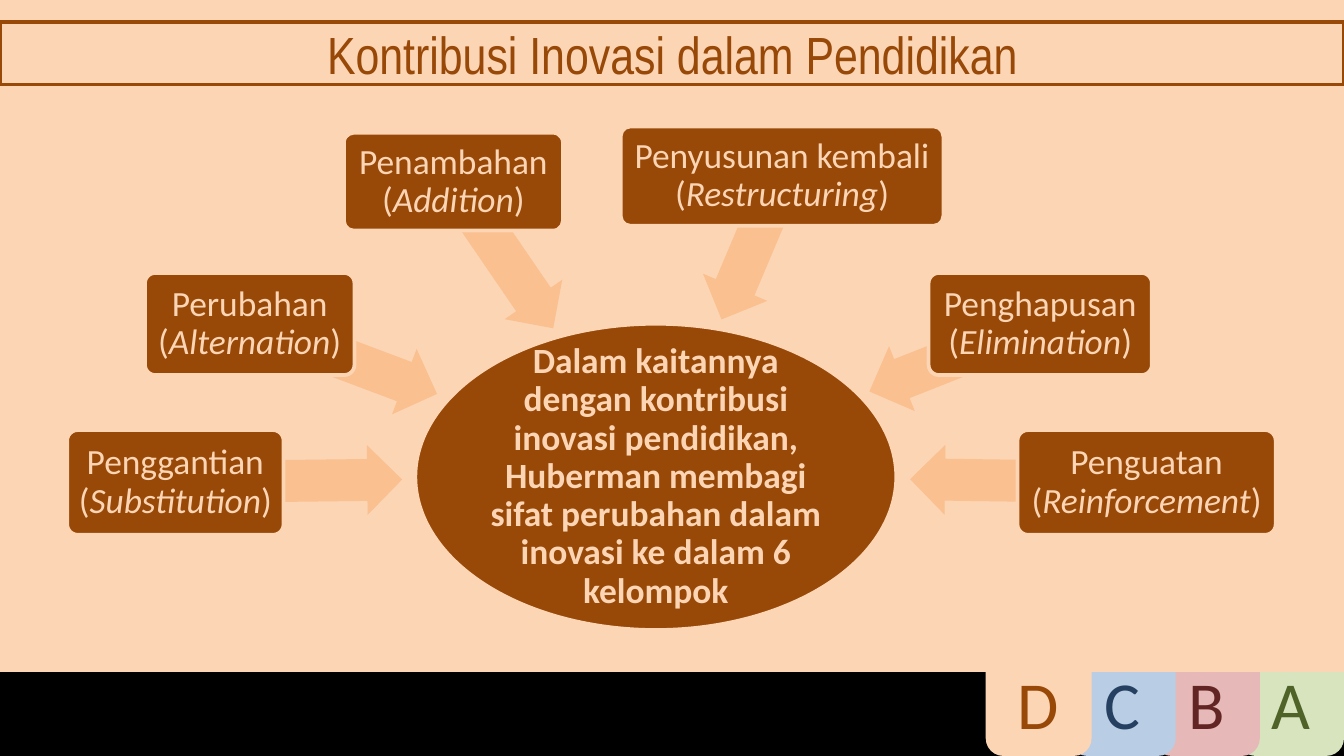
from pptx import Presentation
from pptx.dml.color import RGBColor
from pptx.enum.shapes import MSO_SHAPE
from pptx.enum.text import MSO_ANCHOR, MSO_AUTO_SIZE, PP_ALIGN
from pptx.util import Cm, Pt

BLACK = RGBColor(0x00, 0x00, 0x00)
BROWN = RGBColor(0x98, 0x48, 0x07)
PEACH = RGBColor(0xFC, 0xD5, 0xB5)
ORANGE = RGBColor(0xFA, 0xC0, 0x90)
GREEN = RGBColor(0xD7, 0xE4, 0xBD)
DARK_GREEN = RGBColor(0x4F, 0x62, 0x28)
PINK = RGBColor(0xE6, 0xB9, 0xB8)
DARK_RED = RGBColor(0x63, 0x25, 0x23)
BLUE = RGBColor(0xB9, 0xCD, 0xE5)
DARK_BLUE = RGBColor(0x25, 0x40, 0x61)

SLIDE_WIDTH, SLIDE_HEIGHT = 25.4, 14.29
PANEL_HEIGHT = 12.7
TAB_SIZE, TAB_STEP = 2, 1.59
ARROW_HEIGHT = 1.32

TITLE = "Kontribusi Inovasi dalam Pendidikan"
CENTRE_TEXT = (
    "Dalam kaitannya dengan kontribusi inovasi pendidikan, Huberman membagi "
    "sifat perubahan dalam inovasi ke dalam 6 kelompok"
)
BACK_TABS = [("A", GREEN, DARK_GREEN), ("B", PINK, DARK_RED), ("C", BLUE, DARK_BLUE)]
FRONT_TAB = ("D", PEACH, BROWN)
CONTRIBUTIONS = [
    ("Penggantian", "Substitution", (1.27, 8.13, 4.09, 1.98), (3.33, 8.43, 4.27), 179.3),
    ("Perubahan", "Alternation", (2.74, 5.16, 3.96, 1.93), (4.6, 6.12, 3.78), 200.6),
    ("Penambahan", "Addition", (6.5, 2.51, 4.14, 1.85), (7.85, 4.17, 3.33), 235.6),
    ("Penyusunan kembali", "Restructuring", (11.73, 2.39, 6.1, 1.88), (12.73, 4.01, 2.97), 292.9),
    ("Penghapusan", "Elimination", (17.55, 5.16, 4.22, 1.93), (16.31, 6.1, 3.48), 338.4),
    ("Penguatan", "Reinforcement", (19.23, 8.13, 4.88, 1.98), (17.2, 8.43, 4.47), 0.8),
]


def add_filled_shape(slide, kind, box, fill, outline=None):
    shape = slide.shapes.add_shape(kind, *map(Cm, box))
    shape.shadow.inherit = False
    shape.fill.solid()
    shape.fill.fore_color.rgb = fill
    set_outline(shape, outline)
    return shape


def set_outline(shape, color):
    if color is None:
        shape.line.fill.background()
    else:
        shape.line.color.rgb = color
        shape.line.width = Pt(2)


def write_text(shape, texts, size, color, font_name="Calibri", bold=False, margin=None, spacing=None):
    frame = shape.text_frame
    frame.word_wrap = True
    frame.auto_size = MSO_AUTO_SIZE.NONE
    frame.vertical_anchor = MSO_ANCHOR.MIDDLE
    if margin is not None:
        frame.margin_left = frame.margin_right = Cm(margin)
        frame.margin_top = frame.margin_bottom = Cm(margin)
    paragraph = frame.paragraphs[0]
    paragraph.alignment = PP_ALIGN.CENTER
    paragraph.line_spacing = spacing
    for position, text in enumerate(texts):
        run = paragraph.add_run()
        run.text = text
        run.font.name = font_name
        run.font.size = Pt(size)
        run.font.bold = bold
        run.font.italic = position == 1
        run.font.color.rgb = color


def add_tab(slide, position, letter, fill, color):
    left = SLIDE_WIDTH - TAB_SIZE - position * TAB_STEP
    box = (left, SLIDE_HEIGHT - TAB_SIZE, TAB_SIZE, TAB_SIZE)
    tab = add_filled_shape(slide, MSO_SHAPE.ROUNDED_RECTANGLE, box, fill)
    write_text(tab, [letter], 36, color)


def add_title(slide):
    title = slide.shapes.title
    title.left, title.top, title.width, title.height = map(Cm, (0, 0.41, SLIDE_WIDTH, 1.19))
    set_outline(title, BROWN)
    write_text(title, [TITLE], 28, BROWN, "Arial Narrow")
    title.element.getparent().append(title.element)


def add_contribution(slide, name, term, box, arrow_place, rotation):
    arrow = add_filled_shape(slide, MSO_SHAPE.LEFT_ARROW, (*arrow_place, ARROW_HEIGHT), ORANGE)
    arrow.adjustments[0] = 0.6
    arrow.adjustments[1] = 0.5
    arrow.rotation = rotation
    label = add_filled_shape(slide, MSO_SHAPE.ROUNDED_RECTANGLE, box, BROWN, PEACH)
    label.adjustments[0] = 0.1
    write_text(label, [f"{name} (", term, ")"], 19, PEACH, margin=0.1, spacing=0.9)


def main():
    presentation = Presentation()
    presentation.slide_width = Cm(SLIDE_WIDTH)
    presentation.slide_height = Cm(SLIDE_HEIGHT)
    slide = presentation.slides.add_slide(presentation.slide_layouts[5])
    slide.background.fill.solid()
    slide.background.fill.fore_color.rgb = BLACK

    for position, tab in enumerate(BACK_TABS):
        add_tab(slide, position, *tab)
    add_filled_shape(slide, MSO_SHAPE.RECTANGLE, (0, 0, SLIDE_WIDTH, PANEL_HEIGHT), PEACH)
    add_tab(slide, len(BACK_TABS), *FRONT_TAB)
    add_title(slide)

    centre = add_filled_shape(slide, MSO_SHAPE.OVAL, (7.85, 6.12, 9.09, 5.79), BROWN, PEACH)
    write_text(centre, [CENTRE_TEXT], 19, PEACH, bold=True, margin=0.03, spacing=0.9)
    for contribution in CONTRIBUTIONS:
        add_contribution(slide, *contribution)

    presentation.save("out.pptx")


if __name__ == "__main__":
    main()
